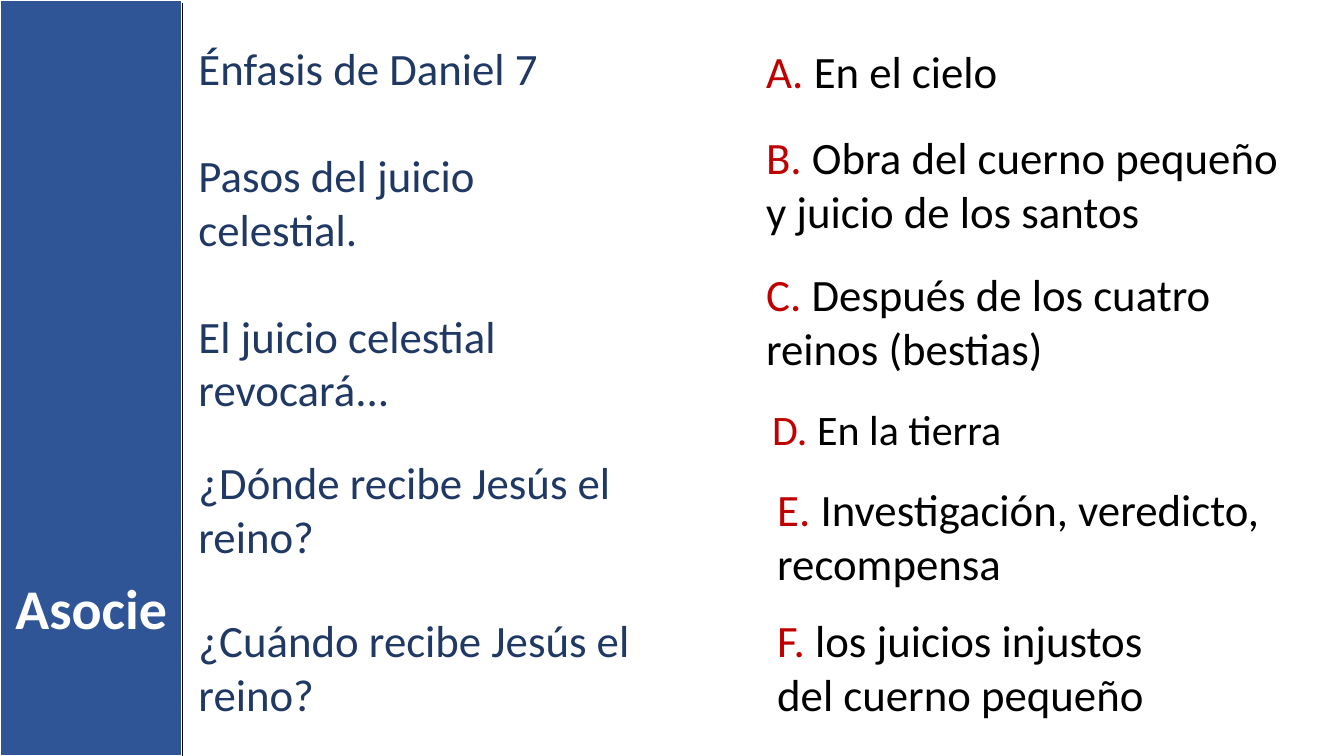
import pptx
import pptx.dml.color
import pptx.enum.shapes
import pptx.enum.text
import pptx.oxml.ns
import pptx.util
from lxml import etree

Inches = pptx.util.Inches
Pt = pptx.util.Pt

NAVY, RED, BLACK, WHITE, BLUE = "203864", "C00000", "000000", "FFFFFF", "2F5597"
BAND_WIDTH = 1.81
QUESTION_LEFT = 1.87

QUESTIONS = [
    ("Énfasis de Daniel 7", 0.36, 4.25, 0.64),
    ("Pasos del juicio celestial.", 1.42, 4.47, 1.18),
    ("El juicio celestial revocará...", 3.01, 5.05, 1.18),
    ("¿Dónde recibe Jesús el reino?", 4.46, 4.94, 1.18),
    ("¿Cuándo recibe Jesús el reino?", 6.03, 4.78, 1.18),
]

ANSWERS = [
    ("A. ", "En el cielo", 7.5, 0.38, 5.04, 0.64, 32),
    ("B. ", "Obra del cuerno pequeño y juicio de los santos", 7.5, 1.24, 5.3, 1.18, 32),
    ("C. ", "Después de los cuatro reinos (bestias)", 7.5, 2.6, 4.88, 1.18, 32),
    ("D. ", "En la tierra", 7.56, 3.95, 5.29, 0.61, 30),
    ("E. ", "Investigación, veredicto, recompensa", 7.61, 4.73, 5.18, 1.18, 32),
    ("F. ", "los juicios injustos del cuerno pequeño", 7.61, 6.03, 4.15, 1.18, 32),
]


def color(code):
    return pptx.dml.color.RGBColor.from_string(code)


class SlideBuilder:
    def __init__(self, page, font):
        self.page = page
        self.font = font

    def rectangle(self, left, top, width, height, fill, line, weight):
        box = self.page.shapes.add_shape(
            pptx.enum.shapes.MSO_SHAPE.RECTANGLE,
            Inches(left), Inches(top), Inches(width), Inches(height))
        box.shadow.inherit = False
        box.fill.solid()
        box.fill.fore_color.rgb = color(fill)
        box.line.color.rgb = color(line)
        box.line.width = Pt(weight)

    def line(self, x1, y1, x2, y2, stroke, weight):
        connector = self.page.shapes.add_connector(
            pptx.enum.shapes.MSO_CONNECTOR.STRAIGHT,
            Inches(x1), Inches(y1), Inches(x2), Inches(y2))
        connector.line.color.rgb = color(stroke)
        connector.line.width = Pt(weight)
        etree.SubElement(connector._element.spPr, pptx.oxml.ns.qn("a:effectLst"))

    def text(self, left, top, width, height, spans, size=32, bold=False, align=None):
        box = self.page.shapes.add_textbox(
            Inches(left), Inches(top), Inches(width), Inches(height))
        frame = box.text_frame
        frame.word_wrap = True
        frame.auto_size = pptx.enum.text.MSO_AUTO_SIZE.SHAPE_TO_FIT_TEXT
        para = frame.paragraphs[0]
        para.alignment = align
        style = {"name": self.font, "size": Pt(size), "bold": bold}
        for words, ink in spans:
            span = para.add_run()
            span.text = words
            for key, value in style.items():
                setattr(span.font, key, value)
            span.font.color.rgb = color(ink)


def main():
    deck = pptx.Presentation()
    deck.slide_width = Inches(13.33)
    deck.slide_height = Inches(7.5)
    page = deck.slides.add_slide(deck.slide_layouts[6])
    builder = SlideBuilder(page, "Calibri")

    builder.rectangle(0, 0, BAND_WIDTH, 7.5, BLUE, WHITE, 1.5)
    for words, top, width, height in QUESTIONS:
        builder.text(QUESTION_LEFT, top, width, height, [(words, NAVY)])
    for letter, words, left, top, width, height, size in ANSWERS:
        builder.text(left, top, width, height, [(letter, RED), (words, BLACK)], size)
    builder.text(0, 5.64, BAND_WIDTH, 0.77, [("Asocie", WHITE)], 40, True,
                 pptx.enum.text.PP_ALIGN.CENTER)
    builder.line(BAND_WIDTH, 0.03, BAND_WIDTH, 7.5, BLACK, 1)

    deck.save("out.pptx")


if __name__ == "__main__":
    main()
